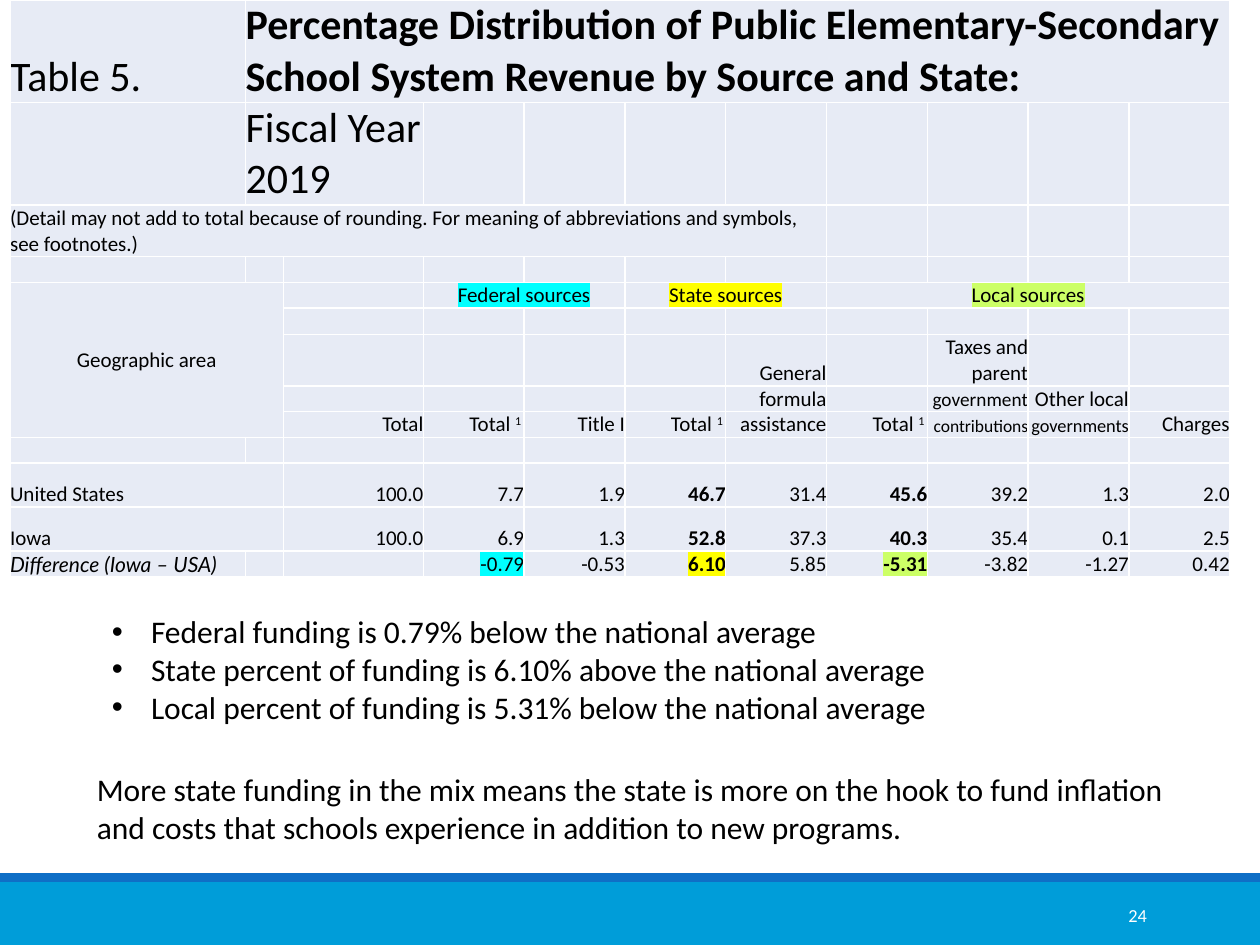
from lxml.etree import SubElement
from pptx import Presentation
from pptx.dml.color import RGBColor
from pptx.enum.shapes import MSO_SHAPE as Shape
from pptx.enum.text import MSO_ANCHOR as Anchor, PP_ALIGN as Align
from pptx.oxml.ns import qn
from pptx.util import Inches, Pt


def color(hex_string):
    return RGBColor.from_string(hex_string)


def add_run(paragraph, text, size, ink="000000", font="Calibri", bold=False,
            italic=False, highlight=None):
    run = paragraph.add_run()
    run.text = text
    run.font.size = Pt(size)
    run.font.name = font
    run.font.bold = bold
    run.font.italic = italic
    run.font.color.rgb = color(ink)
    if highlight:
        properties = run._r.get_or_add_rPr()
        mark = SubElement(properties, qn("a:highlight"))
        SubElement(mark, qn("a:srgbClr"), val=highlight)
        properties.find(qn("a:solidFill")).addnext(mark)
    return run


presentation = Presentation()
presentation.slide_width = Inches(10)
presentation.slide_height = Inches(7.5)
slide = presentation.slides.add_slide(presentation.slide_layouts[6])

# Footer bands
for top, height, fill in [(7, 0.5, "009DD9"), (6.93, 0.07, "0F6FC6")]:
    band = slide.shapes.add_shape(Shape.RECTANGLE, 0, Inches(top), Inches(10), Inches(height))
    band.shadow.inherit = False
    band.fill.solid()
    band.fill.fore_color.rgb = color(fill)
    band.line.fill.background()

# Table content, keyed by (row, column)
CYAN, YELLOW, LIME = "00FFFF", "FFFF00", "CCFF66"
texts = {
    (0, 0): "Table 5.",
    (0, 1): "Percentage Distribution of Public Elementary-Secondary "
            "School System Revenue by Source and State:",
    (1, 1): "Fiscal Year 2019",
    (2, 0): "(Detail may not add to total because of rounding. "
            "For meaning of abbreviations and symbols, see footnotes.)",
    (4, 0): "Geographic area",
    (4, 3): "Federal sources", (4, 5): "State sources", (4, 7): "Local sources",
    (6, 6): "General", (6, 8): "Taxes and parent",
    (7, 6): "formula", (7, 8): "government", (7, 9): "Other local",
    (10, 0): "United States", (11, 0): "Iowa", (12, 0): "Difference (Iowa – USA)",
}
value_rows = {
    8: ["Total", "Total ", "Title I", "Total ", "assistance", "Total ",
        "contributions", "governments", "Charges"],
    10: ["100.0", "7.7", "1.9", "46.7", "31.4", "45.6", "39.2", "1.3", "2.0"],
    11: ["100.0", "6.9", "1.3", "52.8", "37.3", "40.3", "35.4", "0.1", "2.5"],
    12: ["", "-0.79", "-0.53", "6.10", "5.85", "-5.31", "-3.82", "-1.27", "0.42"],
}
for row, values in value_rows.items():
    for column, value in enumerate(values, start=2):
        texts[row, column] = value
footnoted = [(8, 3), (8, 5), (8, 7)]
sizes = {(0, 0): 24, (0, 1): 24, (1, 1): 24, (7, 8): 11, (8, 8): 10, (8, 9): 10.5}
bold_cells = [(0, 1)] + [(row, column) for row in (10, 11, 12) for column in (5, 7)]
highlights = {(row, column): shade for row in (4, 12)
              for column, shade in [(3, CYAN), (5, YELLOW), (7, LIME)]}
merges = [((0, 1), (0, 10)), ((1, 1), (1, 2)), ((2, 0), (2, 6)), ((4, 0), (8, 1)),
          ((4, 3), (4, 4)), ((4, 5), (4, 6)), ((4, 7), (4, 10)),
          ((10, 0), (10, 1)), ((11, 0), (11, 1))]

# Table grid
widths = [1.87, 0.3, 1.11] + [0.8] * 8
heights = [0.81, 0.81, 0.41, 0.2, 0.2, 0.21, 0.41, 0.2, 0.2, 0.2, 0.35, 0.35, 0.2]
table = slide.shapes.add_table(len(heights), len(widths), Inches(0.08), 0,
                               Inches(sum(widths)), Inches(sum(heights))).table
table.first_row = False
table.horz_banding = False
for column, width in enumerate(widths):
    table.columns[column].width = Inches(width)
for row, height in enumerate(heights):
    table.rows[row].height = Inches(height)
for first, last in merges:
    table.cell(*first).merge(table.cell(*last))

# Table cells
for row in range(len(heights)):
    for column in range(len(widths)):
        place = (row, column)
        cell = table.cell(row, column)
        cell.margin_left = cell.margin_right = cell.margin_top = cell.margin_bottom = 0
        cell.vertical_anchor = Anchor.MIDDLE if place == (4, 0) else Anchor.BOTTOM
        for side in ("a:lnL", "a:lnR", "a:lnT", "a:lnB"):
            border = SubElement(cell._tc.get_or_add_tcPr(), qn(side), w=str(Pt(1)))
            SubElement(SubElement(border, qn("a:solidFill")), qn("a:srgbClr"), val="FFFFFF")
        cell.fill.solid()
        cell.fill.fore_color.rgb = color("E7EBF5")

        paragraph = cell.text_frame.paragraphs[0]
        text = texts.get(place)
        if not text:
            SubElement(paragraph._p, qn("a:endParaRPr"), sz="1200")
            continue
        if row == 4:
            paragraph.alignment = Align.CENTER
        elif column >= 2:
            paragraph.alignment = Align.RIGHT
        is_difference = place == (12, 0)
        add_run(paragraph, text, sizes.get(place, 12),
                font="Lato" if is_difference else "Calibri", italic=is_difference,
                bold=place in bold_cells, highlight=highlights.get(place))
        if place in footnoted:
            note = add_run(paragraph, "1 ", 12)
            note._r.get_or_add_rPr().set("baseline", "30000")

# Slide number
number_box = slide.shapes.add_textbox(Inches(8.12), Inches(7.06), Inches(1.08), Inches(0.4))
number_box.text_frame.word_wrap = True
number_box.text_frame.vertical_anchor = Anchor.MIDDLE
paragraph = number_box.text_frame.paragraphs[0]
paragraph.alignment = Align.RIGHT
add_run(paragraph, "24", 10.5, ink="FFFFFF")

# Bulleted findings
findings = ["Federal funding is 0.79% below the national average",
            "State percent of funding is 6.10% above the national average",
            "Local percent of funding is 5.31% below the national average"]
findings_box = slide.shapes.add_textbox(Inches(0.79), Inches(4.81), Inches(8.25), Inches(1.01))
frame = findings_box.text_frame
frame.word_wrap = True
for index, finding in enumerate(findings):
    paragraph = frame.add_paragraph() if index else frame.paragraphs[0]
    properties = paragraph._p.get_or_add_pPr()
    properties.set("marL", str(Inches(0.31)))
    properties.set("indent", str(-Inches(0.31)))
    SubElement(properties, qn("a:buFont"), typeface="Arial")
    SubElement(properties, qn("a:buChar"), char="•")
    add_run(paragraph, finding, 18)

# Conclusion
conclusion_box = slide.shapes.add_textbox(Inches(0.67), Inches(6.06), Inches(9), Inches(0.71))
conclusion_box.text_frame.word_wrap = True
add_run(conclusion_box.text_frame.paragraphs[0],
        "More state funding in the mix means the state is more on the hook to fund inflation "
        "and costs that schools experience in addition to new programs.", 18)

presentation.save("out.pptx")
